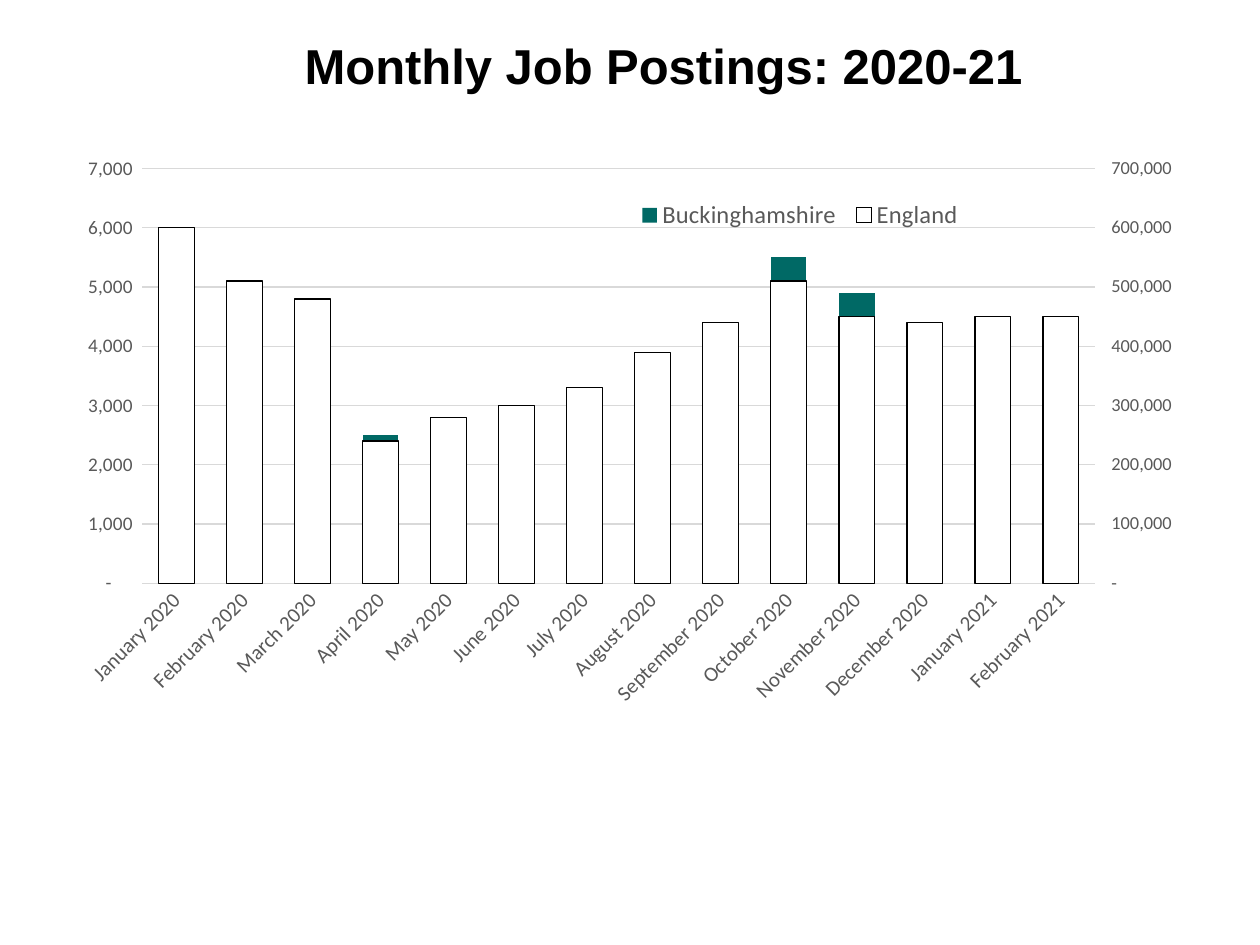
from copy import deepcopy

from lxml import etree
from pptx import Presentation
from pptx import util as u
from pptx.chart import axis as chart_axis
from pptx.chart import data as chart_data
from pptx.dml.color import RGBColor
from pptx.enum import chart as ch, text
from pptx.oxml.ns import qn

COLOURS = {"title": "000000", "label": "595959", "grid": "D9D9D9",
           "buckinghamshire": "006965", "england": "FFFFFF", "outline": "000000"}
NUMBER_FORMAT = '_-* #,##0_-;\\-* #,##0_-;_-* "-"??_-;_-@_-'

MONTHS = ["January", "February", "March", "April", "May", "June", "July", "August",
          "September", "October", "November", "December"]
PERIODS = [f"{month} 2020" for month in MONTHS] + [f"{month} 2021" for month in MONTHS[:2]]
BUCKINGHAMSHIRE = [6000, 5000, 4800, 2500, 2600, 2800, 3300,
                   3700, 4400, 5500, 4900, 4000, 4500, 4500]
ENGLAND = [600000, 510000, 480000, 240000, 280000, 300000, 330000,
           390000, 440000, 510000, 450000, 440000, 450000, 450000]


def rgb(name):
    return RGBColor.from_string(COLOURS[name])


def style_font(font, size, colour, family="Calibri"):
    font.size = u.Pt(size)
    font.name = family
    font.color.rgb = rgb(colour)


def style_line(line, colour):
    line.color.rgb = rgb(colour)
    line.width = u.Pt(0.75)


def manual_layout(x, y, w, h, inner=False):
    """Make a c:layout element from fractions of the chart area."""
    layout = etree.Element(qn("c:layout"))
    manual = etree.SubElement(layout, qn("c:manualLayout"))
    settings = [("layoutTarget", "inner")] if inner else []
    settings += [("xMode", "edge"), ("yMode", "edge"), ("x", x), ("y", y), ("w", w), ("h", h)]
    for tag, value in settings:
        etree.SubElement(manual, qn(f"c:{tag}")).set("val", str(value))
    return layout


def add_title(slide):
    title = slide.shapes.title
    title.left, title.top = u.Inches(0.82), u.Inches(-0.11)
    title.width, title.height = u.Inches(9), u.Inches(1.25)
    title.text_frame.text = "Monthly Job Postings: 2020-21 "
    title.text_frame.vertical_anchor = text.MSO_ANCHOR.MIDDLE
    heading = title.text_frame.paragraphs[0]
    heading.alignment = text.PP_ALIGN.CENTER
    style_font(heading.runs[0].font, 28, "title", "Arial")
    heading.runs[0].font.bold = True


def style_axes(chart):
    periods = chart.category_axis
    periods.major_tick_mark = ch.XL_TICK_MARK.NONE
    style_line(periods.format.line, "grid")
    style_font(periods.tick_labels.font, 12, "label")

    postings = chart.value_axis
    postings.minimum_scale, postings.maximum_scale = 0, 7000
    postings.major_unit = 1000
    postings.major_tick_mark = ch.XL_TICK_MARK.NONE
    postings.format.line.fill.background()
    style_line(postings.major_gridlines.format.line, "grid")
    style_font(postings.tick_labels.font, 11, "label")
    postings.tick_labels.number_format = NUMBER_FORMAT
    postings.tick_labels.number_format_is_linked = False

    # Slant the month labels
    body = chart.element.find(f".//{qn('c:catAx')}/{qn('c:txPr')}/{qn('a:bodyPr')}")
    body.set("rot", "-2700000")
    body.set("vert", "horz")


def move_england_to_right_axis(chart):
    """Give the second series its own bars and a value axis on the right."""
    plot_area = chart.element.find(f".//{qn('c:plotArea')}")
    left_bars = plot_area.find(qn("c:barChart"))
    right_bars = deepcopy(left_bars)
    left_bars.remove(left_bars.findall(qn("c:ser"))[1])
    right_bars.remove(right_bars.findall(qn("c:ser"))[0])
    left_bars.addnext(right_bars)

    cat_axis, val_axis = plot_area.find(qn("c:catAx")), plot_area.find(qn("c:valAx"))
    right_cat, right_val = deepcopy(cat_axis), deepcopy(val_axis)
    val_axis.addnext(right_val)
    right_val.addnext(right_cat)
    cat_id, val_id = "50010", "50020"
    for axis, own, other in ((right_cat, cat_id, val_id), (right_val, val_id, cat_id)):
        axis.find(qn("c:axId")).set("val", own)
        axis.find(qn("c:crossAx")).set("val", other)
    for ref, axis_id in zip(right_bars.findall(qn("c:axId")), (cat_id, val_id)):
        ref.set("val", axis_id)
    right_cat.find(qn("c:delete")).set("val", "1")
    right_val.find(qn("c:axPos")).set("val", "r")
    right_val.find(qn("c:crosses")).set("val", "max")

    england = chart_axis.ValueAxis(right_val)
    england.has_major_gridlines = False
    england.maximum_scale, england.major_unit = 700000, 100000
    england.major_tick_mark = ch.XL_TICK_MARK.OUTSIDE
    england.tick_labels.font.size = u.Pt(10.5)


def add_legend(chart):
    chart.has_legend = True
    chart.legend.position = ch.XL_LEGEND_POSITION.BOTTOM
    chart.legend.include_in_layout = False
    style_font(chart.legend.font, 14, "label")
    position = chart.element.find(f".//{qn('c:legend')}/{qn('c:legendPos')}")
    for old in position.getparent().findall(qn("c:layout")):
        position.getparent().remove(old)
    position.addnext(manual_layout(0.5, 0.08, 0.3, 0.07))


def add_postings_chart(slide):
    data = chart_data.CategoryChartData(number_format="#,##0")
    data.categories = PERIODS
    data.add_series("Buckinghamshire", BUCKINGHAMSHIRE)
    data.add_series("England", ENGLAND)
    chart = slide.shapes.add_chart(
        ch.XL_CHART_TYPE.COLUMN_CLUSTERED, u.Inches(0.5), u.Inches(1.14),
        u.Inches(9), u.Inches(4.95), data).chart
    chart.has_title = False
    style_font(chart.font, 10, "title")

    # Columns
    plot = chart.plots[0]
    plot.gap_width = 91
    plot.vary_by_categories = False
    for series, colour in zip(plot.series, ("buckinghamshire", "england")):
        series.invert_if_negative = False
        series.format.fill.solid()
        series.format.fill.fore_color.rgb = rgb(colour)
    style_line(plot.series[1].format.line, "outline")

    style_axes(chart)
    move_england_to_right_axis(chart)
    add_legend(chart)

    # Plot position
    plot_area = chart.element.find(f".//{qn('c:plotArea')}")
    for old in plot_area.findall(qn("c:layout")):
        plot_area.remove(old)
    plot_area.insert(0, manual_layout(0.07, 0.04, 0.84, 0.665, inner=True))


def main():
    deck = Presentation()
    deck.slide_width, deck.slide_height = u.Inches(10), u.Inches(7.5)
    slide = deck.slides.add_slide(deck.slide_layouts[5])
    add_title(slide)
    add_postings_chart(slide)
    deck.save("out.pptx")


if __name__ == "__main__":
    main()
